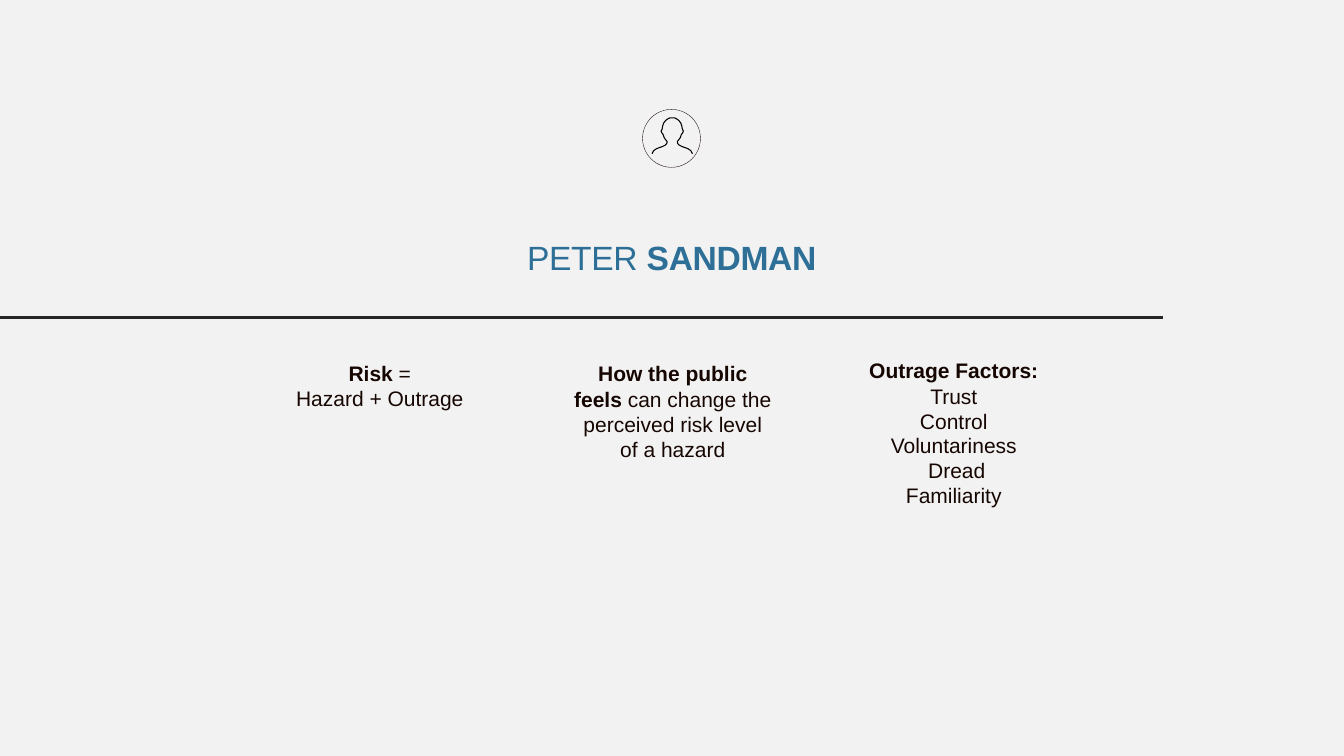
import pptx
import pptx.util
import pptx.dml.color
import pptx.enum.shapes
import pptx.enum.text
from lxml import etree

Inches = pptx.util.Inches
Pt = pptx.util.Pt
RGBColor = pptx.dml.color.RGBColor

PAPER = RGBColor(0xF2, 0xF2, 0xF2)
BLUE = RGBColor(0x2D, 0x6F, 0x96)
GREY = RGBColor(0x26, 0x26, 0x26)
INK = RGBColor(0x16, 0x06, 0x01)
BLACK = RGBColor(0, 0, 0)
FONT = "Arial"
DRAWING = "http://schemas.openxmlformats.org/drawingml/2006/main"

AXIS = 13.34
# Left half of the bust, from shoulder to crown, as (distance from axis, y)
BUST = [(0.40, 3.05), (0.37, 2.99), (0.31, 2.95), (0.26, 2.93), (0.20, 2.91),
        (0.14, 2.88), (0.11, 2.85), (0.10, 2.81), (0.14, 2.76), (0.16, 2.73),
        (0.18, 2.67), (0.21, 2.63), (0.22, 2.60), (0.20, 2.56), (0.19, 2.50),
        (0.17, 2.44), (0.13, 2.39), (0.09, 2.36), (0.05, 2.34), (0, 2.34)]

COLUMNS = [
    ((5.56, 4.07, 1.17), [[("Risk", True), (" = \nHazard + Outrage ", False)]]),
    ((11.29, 4.12, 1.61), [[("How the public feels ", True),
                            ("can change the perceived risk level of a hazard", False)]]),
]
FACTORS = ["Trust ", "Control ", "Voluntariness ", "Dread", "Familiarity "]


def add_box(slide, left, top, width, height):
    box = slide.shapes.add_textbox(Inches(left), Inches(top), Inches(width), Inches(height))
    box.text_frame.word_wrap = True
    return box.text_frame


def add_run(para, text, size, color, bold):
    """Add text, turning each newline into a line break."""
    for i, part in enumerate(text.split("\n")):
        if i:
            para.add_line_break()
        run = para.add_run()
        run.text = part
        font = run.font
        font.name, font.size, font.bold = FONT, Pt(size), bold
        font.color.rgb = color
        yield run


def add_title(slide):
    frame = add_box(slide, 3.58, 4.65, 19.5, 0.91)
    frame.auto_size = pptx.enum.text.MSO_AUTO_SIZE.SHAPE_TO_FIT_TEXT
    para = frame.paragraphs[0]
    para.alignment = pptx.enum.text.PP_ALIGN.CENTER
    for text, bold in [("PETER ", False), ("SANDMAN", True)]:
        for run in add_run(para, text, 48, BLUE, bold):
            run._r.get_or_add_rPr().set("spc", "-50")


def add_column(slide, place, paras):
    left, width, height = place
    frame = add_box(slide, left, 7.11, width, height)
    for i, runs in enumerate(paras):
        para = frame.add_paragraph() if i else frame.paragraphs[0]
        para.alignment = pptx.enum.text.PP_ALIGN.CENTER
        if len(paras) > 1:
            para.line_spacing = 0.7 if i else 0.9
        if i:
            para.space_before = Pt(10)
        for text, bold in runs:
            list(add_run(para, text, 30, INK, bold))


def add_rule(slide):
    rule = slide.shapes.add_connector(
        pptx.enum.shapes.MSO_CONNECTOR.STRAIGHT,
        Inches(0), Inches(6.3), Inches(23.08), Inches(6.3))
    rule.line.color.rgb = GREY
    rule.line.width = Pt(5)
    etree.SubElement(rule._element.spPr, f"{{{DRAWING}}}effectLst")


def set_line(shape, color, width):
    shape.shadow.inherit = False
    shape.fill.background()
    shape.line.color.rgb = color
    shape.line.width = Pt(width)


def add_icon(slide):
    ring = slide.shapes.add_shape(
        pptx.enum.shapes.MSO_SHAPE.OVAL,
        Inches(12.75), Inches(2.17), Inches(1.15), Inches(1.15))
    set_line(ring, INK, 0.5)
    points = [(AXIS - x, y) for x, y in BUST]
    points += [(AXIS + x, y) for x, y in BUST[-2::-1]]
    points = [(Inches(x), Inches(y)) for x, y in points]
    pen = slide.shapes.build_freeform(*points[0])
    pen.add_line_segments(points[1:], close=False)
    set_line(pen.convert_to_shape(), BLACK, 1.5)


def main():
    deck = pptx.Presentation()
    deck.slide_width, deck.slide_height = Inches(26.67), Inches(15)
    slide = deck.slides.add_slide(deck.slide_layouts[6])
    slide.background.fill.solid()
    slide.background.fill.fore_color.rgb = PAPER
    add_title(slide)
    add_rule(slide)
    for place, paras in COLUMNS:
        add_column(slide, place, paras)
    factors = [[("Outrage Factors: ", True)]] + [[(name, False)] for name in FACTORS]
    add_column(slide, (17.07, 3.83, 2.67), factors)
    add_icon(slide)
    deck.save("out.pptx")


if __name__ == "__main__":
    main()
